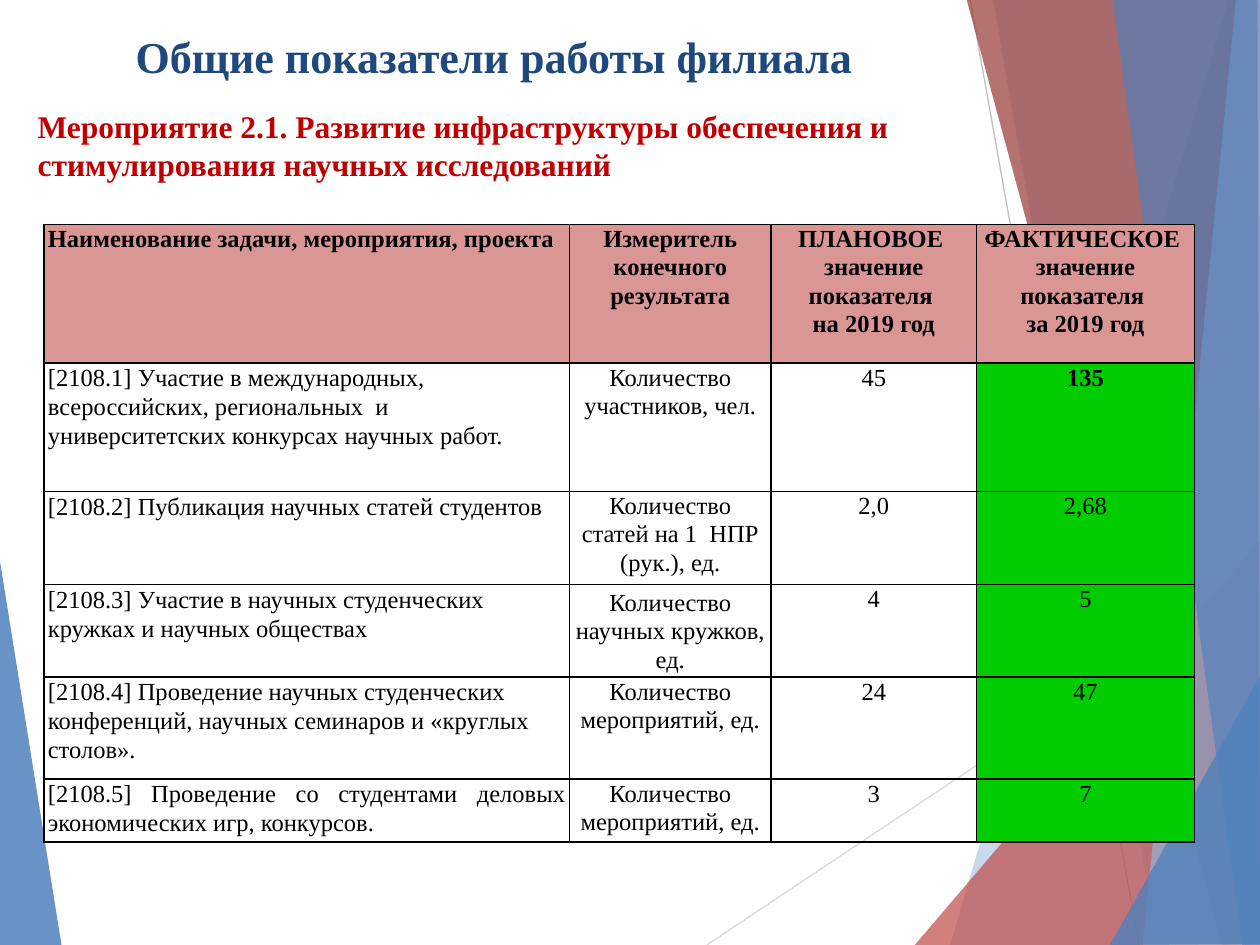
from lxml import etree
from pptx import Presentation
from pptx.dml.color import RGBColor
from pptx.enum.shapes import MSO_CONNECTOR
from pptx.enum.text import MSO_ANCHOR, PP_ALIGN
from pptx.oxml import parse_xml
from pptx.oxml.ns import nsdecls, qn
from pptx.util import Inches, Pt

FONT = "Times New Roman"
BLACK = RGBColor(0x00, 0x00, 0x00)
NAVY = RGBColor(0x1F, 0x49, 0x7D)
CRIMSON = RGBColor(0xC0, 0x00, 0x00)
BLUE = RGBColor(0x4F, 0x81, 0xBD)
PALE_BLUE = RGBColor(0x95, 0xB3, 0xD7)
RED = RGBColor(0xC0, 0x50, 0x4D)
DARK_RED = RGBColor(0x95, 0x37, 0x35)
LIGHT_GRAY = RGBColor(0xD9, 0xD9, 0xD9)
GRAY = RGBColor(0xBF, 0xBF, 0xBF)
PINK = RGBColor(0xD9, 0x96, 0x94)
GREEN = RGBColor(0x00, 0xCC, 0x00)

LEFT_FACET = ([(-0.01, 4.39), (0.49, 7.51), (-0.01, 7.5)], BLUE, 85)
RAYS = [
    ((5.61, 7.5), (10.01, 4.57), LIGHT_GRAY),
    ((7.7, 0), (9.04, 7.5), GRAY),
]
RIGHT_FACETS = [
    ([(9.75, 0), (7.54, 7.5), (10.02, 7.51), (10.01, 0.01)], BLUE, 30),
    ([(7.88, -0.01), (9.19, 7.5), (10.01, 7.5), (10.01, -0.01)], BLUE, 20),
    ([(7.26, 7.5), (10, 4.29), (10.01, 7.5)], RED, 72),
    ([(7.67, -0.01), (9.7, 7.5), (10.01, 7.49), (10.01, -0.01)], DARK_RED, 70),
    ([(9.81, -0.01), (9.07, 7.5), (10.01, 7.5), (10, -0.01)], PALE_BLUE, 70),
    ([(8.83, -0.01), (9.86, 7.5), (10, 7.5), (9.98, -0.01)], BLUE, 65),
    ([(8.81, 7.5), (10.01, 5.35), (10.01, 7.49)], BLUE, 80),
]

COL_WIDTHS = [4.17, 1.6, 1.63, 1.73]
ROW_HEIGHTS = [1.1, 1.02, 0.74, 0.73, 0.81, 0.5]
ROWS = [
    ["Наименование задачи, мероприятия, проекта",
     "Измеритель конечного результата",
     "ПЛАНОВОЕ \nзначение показателя \nна 2019 год",
     "ФАКТИЧЕСКОЕ \nзначение показателя \nза 2019 год"],
    ["[2108.1] Участие в международных, всероссийских, региональных  и "
     "университетских конкурсах научных работ.",
     "Количество участников, чел.", "45", "135"],
    ["[2108.2] Публикация научных статей студентов",
     "Количество статей на 1  НПР (рук.), ед.", "2,0", "2,68"],
    ["[2108.3] Участие в научных студенческих кружках и научных обществах",
     "Количество научных кружков, ед.", "4", "5"],
    ["[2108.4] Проведение научных студенческих конференций, научных "
     "семинаров и «круглых столов».",
     "Количество мероприятий, ед.", "24", "47"],
    ["[2108.5] Проведение со студентами деловых экономических игр, конкурсов.",
     "Количество мероприятий, ед.", "3", "7"],
]


def add_run(p, text, size, color, bold):
    r = p.add_run()
    r.text = text
    r.font.name = FONT
    r.font.size = Pt(size)
    r.font.bold = bold
    r.font.color.rgb = color


def add_facet(s, points, color, opacity):
    pts = [(Inches(x), Inches(y)) for x, y in points]
    builder = s.shapes.build_freeform(*pts[0])
    builder.add_line_segments(pts[1:], close=True)
    sp = builder.convert_to_shape()
    sp.shadow.inherit = False
    sp.line.fill.background()
    sp.fill.solid()
    sp.fill.fore_color.rgb = color
    clr = sp.element.spPr.find(qn("a:solidFill")).find(qn("a:srgbClr"))
    etree.SubElement(clr, qn("a:alpha")).set("val", str(opacity * 1000))


def add_ray(s, start, end, color):
    ends = [Inches(v) for v in (*start, *end)]
    line = s.shapes.add_connector(MSO_CONNECTOR.STRAIGHT, *ends)
    line.line.color.rgb = color
    line.line.width = Pt(0.75)
    etree.SubElement(line.element.spPr, qn("a:effectLst"))


def add_title(s):
    sp = s.shapes.title
    sp.left, sp.top = Inches(0.45), Inches(0.17)
    sp.width, sp.height = Inches(6.94), Inches(0.55)
    s.shapes.element.append(sp.element)
    tf = sp.text_frame
    tf.vertical_anchor = MSO_ANCHOR.MIDDLE
    p = tf.paragraphs[0]
    p.alignment = PP_ALIGN.CENTER
    add_run(p, "Общие показатели работы филиала", 25.2, NAVY, True)


def add_subtitle(s):
    sp = s.shapes.add_textbox(Inches(0.2), Inches(0.8), Inches(8.85), Inches(0.71))
    tf = sp.text_frame
    tf.word_wrap = True
    add_run(tf.paragraphs[0],
            "Мероприятие 2.1. Развитие инфраструктуры обеспечения и "
            "стимулирования научных исследований", 18, CRIMSON, True)


def set_borders(cell):
    tc_pr = cell._tc.get_or_add_tcPr()
    for i, side in enumerate(("lnL", "lnR", "lnT", "lnB")):
        tc_pr.insert(i, parse_xml(
            f'<a:{side} {nsdecls("a")} w="{Pt(1)}"><a:solidFill>'
            f'<a:srgbClr val="{BLACK}"/></a:solidFill></a:{side}>'))


def fill_cell(cell, text, align, spacing, bold, color):
    cell.margin_left = cell.margin_right = Inches(0.03)
    cell.margin_top = cell.margin_bottom = 0
    if color is None:
        cell.fill.background()
    else:
        cell.fill.solid()
        cell.fill.fore_color.rgb = color
    set_borders(cell)
    tf = cell.text_frame
    for i, line in enumerate(text.split("\n")):
        p = tf.add_paragraph() if i else tf.paragraphs[0]
        p.alignment = align
        p.line_spacing = spacing
        add_run(p, line, 14, BLACK, bold)


def add_indicator_table(s):
    frame = s.shapes.add_table(
        len(ROWS), len(COL_WIDTHS), Inches(0.35), Inches(1.78),
        Inches(sum(COL_WIDTHS)), Inches(sum(ROW_HEIGHTS)))
    table = frame.table
    table.first_row = table.horz_banding = False
    for col, width in zip(table.columns, COL_WIDTHS):
        col.width = Inches(width)
    for row, height in zip(table.rows, ROW_HEIGHTS):
        row.height = Inches(height)
    for i, row in enumerate(ROWS):
        for j, text in enumerate(row):
            align = PP_ALIGN.LEFT if j == 0 else PP_ALIGN.CENTER
            color = PINK if i == 0 else GREEN if j == 3 else None
            bold = i == 0 or (i, j) == (1, 3)
            fill_cell(table.cell(i, j), text, align,
                      1.07 if j == 0 else 1.05, bold, color)
    table.cell(3, 1).vertical_anchor = MSO_ANCHOR.MIDDLE
    table.cell(5, 0).text_frame.paragraphs[0].alignment = PP_ALIGN.JUSTIFY


def main():
    prs = Presentation()
    prs.slide_width, prs.slide_height = Inches(10), Inches(7.5)
    s = prs.slides.add_slide(prs.slide_layouts[5])
    add_facet(s, *LEFT_FACET)
    for ray in RAYS:
        add_ray(s, *ray)
    for facet in RIGHT_FACETS:
        add_facet(s, *facet)
    add_title(s)
    add_subtitle(s)
    add_indicator_table(s)
    prs.save("out.pptx")


if __name__ == "__main__":
    main()
